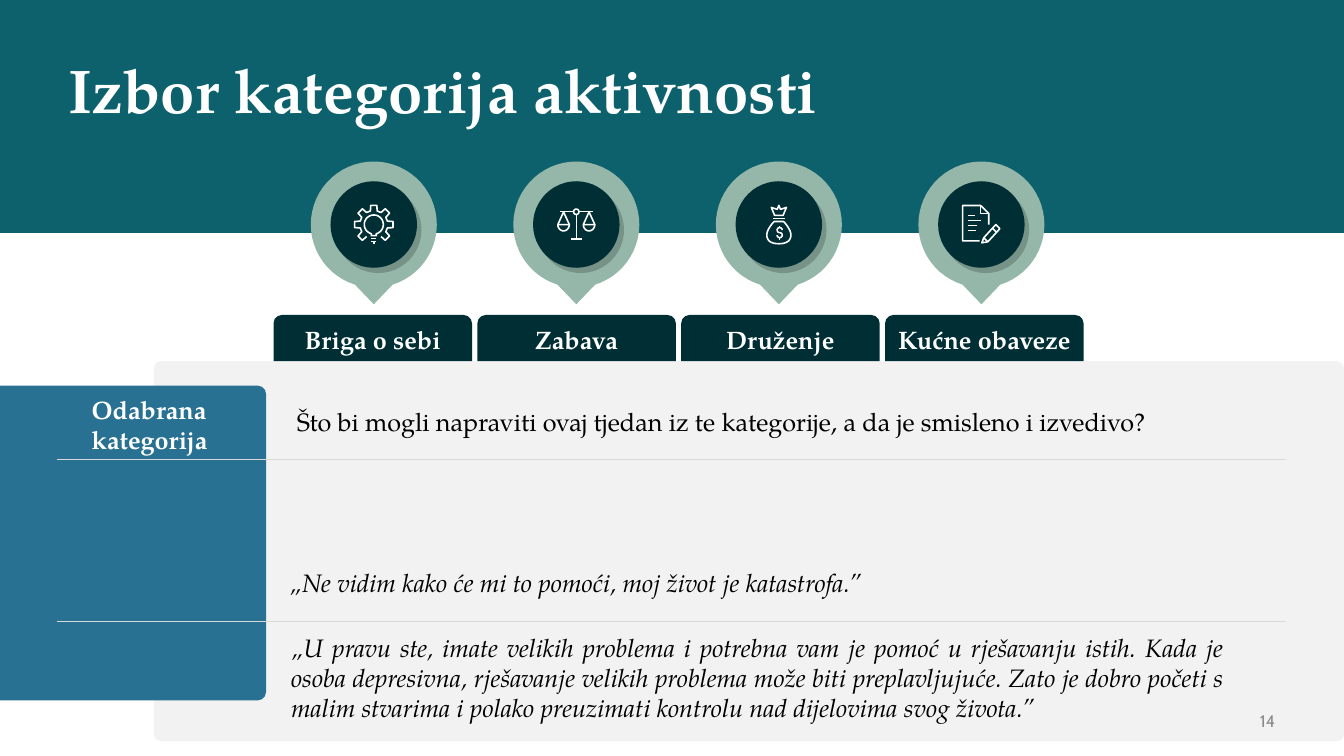
from math import cos, radians, sin

from lxml.etree import SubElement
from pptx import Presentation
from pptx.dml.color import RGBColor
from pptx.enum.shapes import MSO_CONNECTOR, MSO_SHAPE
from pptx.enum.text import MSO_ANCHOR, PP_ALIGN
from pptx.oxml.ns import qn
from pptx.util import Pt

SERIF, SANS = "TeX Gyre Pagella", "Cabin"
TEAL, DARK, SAGE, BLUE = "0D616C", "002E35", "95B7A9", "287192"
WHITE, BLACK, PALE, RULE, GREY = "FFFFFF", "000000", "F2F2F2", "D9D9D9", "8C8C8C"


def rgb(color):
    return RGBColor.from_string(color)


def arc(cx, cy, rx, start, end, ry=None):
    """Points on an ellipse arc; angles in degrees, clockwise from the right."""
    steps = max(6, int(abs(end - start) / 6))
    angles = [radians(start + (end - start) * i / steps) for i in range(steps + 1)]
    return [(cx + rx * cos(a), cy + (ry or rx) * sin(a)) for a in angles]


def bezier(a, b, c, d, steps=16):
    """Points on a cubic curve."""
    curve = []
    for i in range(steps + 1):
        t = i / steps
        weights = ((1 - t) ** 3, 3 * t * (1 - t) ** 2, 3 * t * t * (1 - t), t ** 3)
        curve.append(tuple(sum(w * p[k] for w, p in zip(weights, (a, b, c, d)))
                           for k in (0, 1)))
    return curve


class Painter:
    def __init__(self, slide):
        self.shapes = slide.shapes
        self.font, self.size, self.icon_width = SERIF, 18, 1.13

    def shape(self, kind, box, color, adjustments=(), rotation=0):
        shape = self.shapes.add_shape(kind, *map(Pt, box))
        for i, value in enumerate(adjustments):
            shape.adjustments[i] = value
        shape.rotation = rotation
        return self.fill(shape, color)

    def fill(self, shape, color):
        shape.shadow.inherit = False
        shape.fill.solid()
        shape.fill.fore_color.rgb = rgb(color)
        shape.line.fill.background()
        return shape

    def cast_shadow(self, shape, distance, angle, alpha):
        effects = shape._element.spPr.find(qn("a:effectLst"))
        shadow = SubElement(effects, qn("a:outerShdw"), blurRad="0", dist=str(Pt(distance)),
                            dir=str(angle * 60000), algn="tl", rotWithShape="0")
        color = SubElement(shadow, qn("a:srgbClr"), val=BLACK)
        SubElement(color, qn("a:alpha"), val=str(alpha * 1000))

    def outline(self, center, points, closed):
        corners = [(Pt(center[0] + x), Pt(center[1] + y)) for x, y in points]
        builder = self.shapes.build_freeform(*corners[0])
        builder.add_line_segments(corners[1:], close=closed)
        return builder.convert_to_shape()

    def line(self, start, end, color, width):
        line = self.shapes.add_connector(MSO_CONNECTOR.STRAIGHT, *map(Pt, (*start, *end)))
        line.line.color.rgb = rgb(color)
        line.line.width = Pt(width)
        SubElement(line._element.spPr, qn("a:effectLst"))

    def stroke(self, center, points, closed=False):
        if len(points) == 2:
            start, end = [(center[0] + x, center[1] + y) for x, y in points]
            self.line(start, end, WHITE, self.icon_width)
            return
        shape = self.outline(center, points, closed)
        shape.shadow.inherit = False
        shape.fill.background()
        shape.line.color.rgb = rgb(WHITE)
        shape.line.width = Pt(self.icon_width)

    def label(self, shape, text, color, size=None, font=None, bold=False, italic=False,
              align=PP_ALIGN.LEFT, anchor=MSO_ANCHOR.MIDDLE, inset=True, spacing=None):
        frame = shape.text_frame
        frame.word_wrap, frame.vertical_anchor = True, anchor
        if not inset:
            frame.margin_left = frame.margin_right = frame.margin_top = frame.margin_bottom = 0
        frame.text = text
        paragraph = frame.paragraphs[0]
        paragraph.alignment, paragraph.line_spacing = align, spacing
        style = paragraph.runs[0].font
        style.name, style.size = font or self.font, Pt(size or self.size)
        style.bold, style.italic, style.color.rgb = bold, italic, rgb(color)

    def text(self, box, text, color, **style):
        self.label(self.shapes.add_textbox(*map(Pt, box)), text, color, **style)


def self_care_icon():
    gear = []
    for tooth in range(45, -226, -45):
        for radius, turn in ((10, 14), (13.9, 9), (13.9, -9), (10, -14)):
            angle = radians(tooth + turn)
            gear.append((radius * cos(angle), radius * sin(angle)))
    bulb = arc(0, 0, 6.8, 75, -255) + [(-1.8, 7.9), (1.8, 7.9)]
    return [(gear, False), (bulb, True), ([(-1.8, 10.1), (1.8, 10.1)], False),
            ([(-1.8, 12.2), (1.8, 12.2)], False), ([(0, 12.2), (0, 13.7)], False)]


def fun_icon():
    strokes = [([(0, -6.9), (0, 10.4)], False), ([(-3.9, 10.4), (3.9, 10.4)], False),
               (arc(0, -9.1, 1.9, 0, 360), True)]
    for side in (-1, 1):
        pan = side * 9.1
        strokes += [([(side * 2.2, -9.3), (side * 11.9, -9.3)], False),
                    ([(pan - 4.1, 0), (pan, -9), (pan + 4.1, 0)], False),
                    (arc(pan, 0, 4.1, 0, 180, 4.5), True)]
    return strokes


def company_icon():
    left = (bezier((-3.3, -2.2), (-5.6, 0), (-8.6, 4.4), (-8.6, 7.3))
            + bezier((-8.6, 7.3), (-8.6, 11), (-6.3, 13.7), (0, 13.7)))
    bag = left + [(-x, y) for x, y in reversed(left)]
    dollar = arc(0.6, 7.6, 1.8, 180, -90) + arc(0.6, 4, 1.8, 90, 360)
    crown = [(5.4, -12.2), (1.2, -10.8), (0, -13.7), (-1.2, -10.8), (-5.4, -12.2),
             (-3, -6.5), (3, -6.5)]
    return [(dollar, False), ([(0.6, 9.4), (0.6, 10.8)], False),
            ([(0.6, 1.2), (0.6, 2.2)], False), (bag, True),
            ([(-4.3, -4.2), (4.3, -4.2)], False), (crown, True)]


def chores_icon():
    notes = [([(-9.9, y), (end, y)], False)
             for y, end in ((-6.4, -4.9), (-2.8, -0.5), (0.8, -3.4), (4.4, -4.1))]
    pencil = [(4.6, 12.3), (0.3, 13), (1.7, 9.4), (10.3, 0), (13.2, 2.9)]
    page = [(-1.2, 11.6), (-13.4, 11.6), (-13.4, -13.6), (-0.5, -13.6), (5.3, -7.9), (5.3, 0)]
    fold = [(-0.5, -13.6), (-0.5, -7.9), (5.3, -7.9)]
    return notes + [(pencil, True), ([(8.2, 2.9), (11.1, 5.8)], False),
                    ([(1.7, 9.4), (4.6, 12.3)], False), (page, False), (fold, False)]


def main():
    deck = Presentation()
    deck.slide_width, deck.slide_height = Pt(960), Pt(540)
    painter = Painter(deck.slides.add_slide(deck.slide_layouts[6]))

    # Backdrop, title and slide number
    painter.shape(MSO_SHAPE.ROUNDED_RECTANGLE, (110, 258, 850, 271.4), PALE, [0.019])
    painter.shape(MSO_SHAPE.RECTANGLE, (0, 0, 960, 166.3), TEAL)
    painter.text((41.8, 28.8, 877, 76.3), "Izbor kategorija aktivnosti", WHITE,
                 size=44, bold=True, spacing=0.9)
    painter.text((885.6, 500.4, 32.4, 28.8), "14", GREY, size=12, font=SANS,
                 align=PP_ALIGN.RIGHT)

    # Category markers with their icons and tabs
    pin = arc(0, 0, 45, 72.6, -252.6) + [(0, 57)]
    categories = (("Briga o sebi", self_care_icon()), ("Zabava", fun_icon()),
                  ("Druženje", company_icon()), ("Kućne obaveze", chores_icon()))
    for i, (category, icon) in enumerate(categories):
        center = (267 + 144.67 * i, 160.4)
        painter.fill(painter.outline(center, pin, True), SAGE)
        disc = painter.shape(MSO_SHAPE.OVAL, (center[0] - 30.9, center[1] - 30.9, 61.8, 61.8),
                             DARK)
        painter.cast_shadow(disc, 5, 50, 20)
        for points, closed in icon:
            painter.stroke(center, points, closed)
        tab = painter.shape(MSO_SHAPE.ROUND_2_SAME_RECTANGLE,
                            (195.4 + 145.6 * i, 225, 141.8, 33), DARK, [0.18, 0])
        painter.label(tab, category, WHITE, bold=True, align=PP_ALIGN.CENTER, inset=False)

    # Chosen category panel and row rules
    painter.shape(MSO_SHAPE.ROUND_2_SAME_RECTANGLE, (-17.4, 292.9, 224.8, 190), BLUE,
                  [0.031, 0], rotation=90)
    for y in (328.3, 443.7):
        painter.line((40.5, y), (918.5, y), RULE, 0.5)
    painter.text((65.5, 289, 134, 28), "Odabrana kategorija", WHITE, bold=True, inset=False)

    # Question and dialogue
    painter.text((205, 286.6, 694, 51), "Što bi mogli napraviti ovaj tjedan iz te kategorije, "
                 "a da je smisleno i izvedivo?", BLACK, anchor=MSO_ANCHOR.TOP)
    painter.text((199.8, 401.8, 719, 51), "„Ne vidim kako će mi to pomoći, moj život je "
                 "katastrofa.”", BLACK, italic=True, anchor=MSO_ANCHOR.TOP)
    painter.text((200.8, 448, 680.4, 94), "„U pravu ste, imate velikih problema i potrebna vam "
                 "je pomoć u rješavanju istih. Kada je osoba depresivna, rješavanje velikih "
                 "problema može biti preplavljujuće. Zato je dobro početi s malim stvarima i "
                 "polako preuzimati kontrolu nad dijelovima svog života.”", BLACK, italic=True,
                 align=PP_ALIGN.JUSTIFY, anchor=MSO_ANCHOR.TOP)

    deck.save("out.pptx")


if __name__ == "__main__":
    main()
